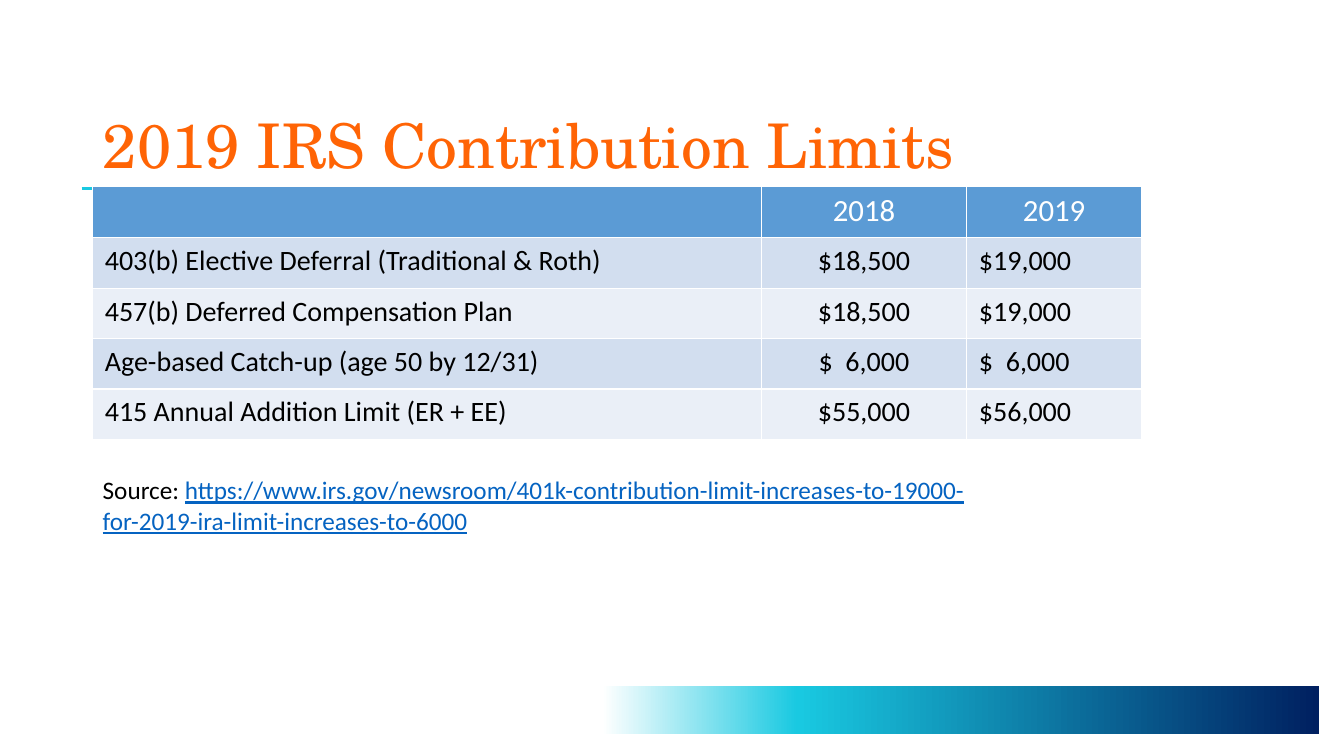
import pptx
import pptx.dml.color
import pptx.enum.shapes
import pptx.enum.text
import pptx.oxml
import pptx.util
from lxml import etree
from pptx.util import Inches

ALIGN = pptx.enum.text.PP_ALIGN
NAMESPACE = "http://schemas.openxmlformats.org/drawingml/2006/main"

LIMITS = [
    ("", "2018", "2019"),
    ("403(b) Elective Deferral (Traditional & Roth)", "$18,500", "$19,000"),
    ("457(b) Deferred Compensation Plan", "$18,500", "$19,000"),
    ("Age-based Catch-up (age 50 by 12/31)", "$  6,000", "$  6,000"),
    ("415 Annual Addition Limit (ER + EE)", "$55,000", "$56,000"),
]
SOURCE_ADDRESS = (
    "https://www.irs.gov/newsroom/401k-contribution-limit-increases-to-19000-"
    "for-2019-ira-limit-increases-to-6000"
)


def color(value):
    return pptx.dml.color.RGBColor.from_string(value)


def drawing_xml(text):
    """Parse one DrawingML element, declaring the a: prefix on its root."""
    tag_name, rest = text.split(" ", 1)
    return pptx.oxml.parse_xml(f'{tag_name} xmlns:a="{NAMESPACE}" {rest}')


class LimitsSlide:
    BODY_FONT = "Calibri"
    TITLE_FONT = "TeX Gyre Schola"
    ORANGE, CYAN, NAVY, LINK = "FF6405", "19C9E1", "002060", "0563C1"
    BLACK, WHITE = "000000", "FFFFFF"
    HEADER, BANDS = "5B9BD5", ("D2DEEF", "EAEFF7")

    def __init__(self, presentation):
        self.slide = presentation.slides.add_slide(presentation.slide_layouts[5])

    def set_font(self, font, size, value, name=BODY_FONT):
        font.size = pptx.util.Pt(size)
        font.name = name
        font.color.rgb = color(value)

    def title(self, text, left, top, width, height):
        shape = self.slide.shapes.title
        shape.left, shape.top = Inches(left), Inches(top)
        shape.width, shape.height = Inches(width), Inches(height)
        frame = shape.text_frame
        frame.text = text
        frame.auto_size = pptx.enum.text.MSO_AUTO_SIZE.NONE
        frame.vertical_anchor = pptx.enum.text.MSO_ANCHOR.BOTTOM
        paragraph = frame.paragraphs[0]
        paragraph.alignment = ALIGN.LEFT
        paragraph.line_spacing = 0.9
        self.set_font(paragraph.font, 44, self.ORANGE, self.TITLE_FONT)

    def footer_band(self, left, top, width, height):
        shape = self.slide.shapes.add_shape(
            pptx.enum.shapes.MSO_SHAPE.RECTANGLE,
            Inches(left), Inches(top), Inches(width), Inches(height))
        shape.shadow.inherit = False
        shape.line.fill.background()
        stops = "".join(
            f'<a:gs pos="{percent * 1000}"><a:srgbClr val="{value}"/></a:gs>'
            for percent, value in ((0, self.NAVY), (72, self.CYAN), (99, self.WHITE)))
        gradient = drawing_xml(
            f'<a:gradFill rotWithShape="1"><a:gsLst>{stops}</a:gsLst>'
            '<a:lin ang="10800000" scaled="0"/></a:gradFill>')
        shape._element.spPr.find(f"{{{NAMESPACE}}}prstGeom").addnext(gradient)

    def rule(self, left, right, top):
        connector = self.slide.shapes.add_connector(
            pptx.enum.shapes.MSO_CONNECTOR.STRAIGHT,
            Inches(left), Inches(top), Inches(right), Inches(top))
        connector.line.color.rgb = color(self.CYAN)
        connector.line.width = pptx.util.Pt(2)
        etree.SubElement(connector._element.spPr, f"{{{NAMESPACE}}}effectLst")

    def cell_borders(self, cell):
        properties = cell._tc.get_or_add_tcPr()
        for position, side in enumerate("LRTB"):
            properties.insert(position, drawing_xml(
                f'<a:ln{side} w="{pptx.util.Pt(1)}"><a:solidFill>'
                f'<a:srgbClr val="{self.WHITE}"/></a:solidFill></a:ln{side}>'))

    def table(self, rows, left, top, widths, heights):
        table = self.slide.shapes.add_table(
            len(rows), len(widths), Inches(left), Inches(top),
            Inches(sum(widths)), Inches(sum(heights))).table
        for column, width in zip(table.columns, widths):
            column.width = Inches(width)
        for row_index, (row, height) in enumerate(zip(rows, heights)):
            table.rows[row_index].height = Inches(height)
            is_header = row_index == 0
            fill = self.HEADER if is_header else self.BANDS[(row_index - 1) % 2]
            for column_index, text in enumerate(row):
                cell = table.cell(row_index, column_index)
                cell.fill.solid()
                cell.fill.fore_color.rgb = color(fill)
                cell.margin_left = cell.margin_right = Inches(0.12)
                cell.margin_top = cell.margin_bottom = Inches(0.06)
                self.cell_borders(cell)
                cell.text = text
                paragraph = cell.text_frame.paragraphs[0]
                centred = is_header or column_index == 1
                paragraph.alignment = ALIGN.CENTER if centred else ALIGN.LEFT
                self.set_font(paragraph.font, 22 if is_header else 20,
                              self.WHITE if is_header else self.BLACK)
                paragraph.font.bold = False

    def source_note(self, address, left, top, width, height):
        box = self.slide.shapes.add_textbox(
            Inches(left), Inches(top), Inches(width), Inches(height))
        box.text_frame.word_wrap = True
        paragraph = box.text_frame.paragraphs[0]
        for text, value in (("Source: ", self.BLACK), (address, self.LINK)):
            run = paragraph.add_run()
            run.text = text
            self.set_font(run.font, 18, value)
            run.font.underline = value == self.LINK


def main():
    presentation = pptx.Presentation()
    presentation.slide_width = Inches(13.33)
    presentation.slide_height = Inches(7.5)
    slide = LimitsSlide(presentation)
    slide.footer_band(5.9, 6.81, 7.18, 0.47)
    slide.rule(0.81, 8.96, 1.87)
    slide.title("2019 IRS Contribution Limits", 0.92, 0.4, 11.5, 1.45)
    slide.table(LIMITS, 0.92, 1.85, (6.63, 2.04, 1.73), [0.51] + [0.5] * 4)
    slide.source_note(SOURCE_ADDRESS, 0.92, 4.66, 8.98, 1.01)
    presentation.save("out.pptx")


if __name__ == "__main__":
    main()
